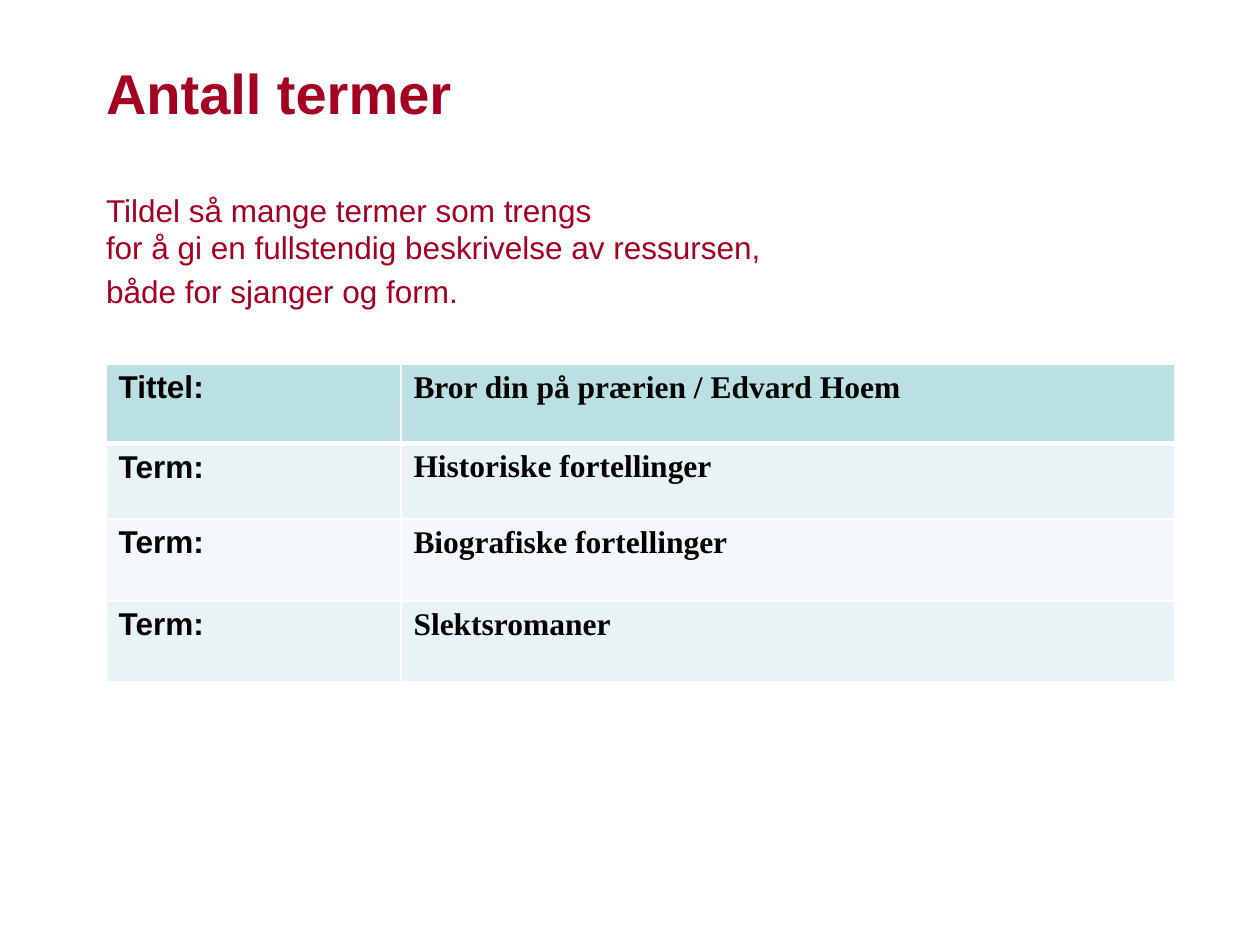
from pptx import Presentation
from pptx.dml.color import RGBColor
from pptx.enum.text import MSO_ANCHOR
from pptx.oxml import parse_xml
from pptx.oxml.ns import nsdecls
from pptx.util import Pt

COLORS = {
    "heading": "A50021",
    "text": "000000",
    "border": "FFFFFF",
    "header": "BBE0E3",
    "odd": "E7F3F4",
    "even": "F3F9FA",
}
HEADING = "Antall termer"
GUIDANCE = [
    ("Tildel så mange termer som trengs\vfor å gi en fullstendig beskrivelse av ressursen,", 37.2),
    ("både for sjanger og form.", 3.6),
]
RECORD = [
    ("Tittel:", "Bror din på prærien / Edvard Hoem"),
    ("Term:", "Historiske fortellinger"),
    ("Term:", "Biografiske fortellinger"),
    ("Term:", "Slektsromaner"),
]
COLUMNS = [(168.5, "Arial"), (442, "Times New Roman")]
ROW_HEIGHTS = [45.4, 43.2, 46.8, 46.4]
LEFT, INTRO_TOP, RECORD_TOP = 60.6, 33.3, 208


def style(paragraph, size, font, color, bold):
    paragraph.font.size = Pt(size)
    paragraph.font.name = font
    paragraph.font.bold = bold
    paragraph.font.color.rgb = RGBColor.from_string(COLORS[color])


def add_borders(cell, bottom_width, top_width):
    properties = cell._tc.get_or_add_tcPr()
    widths = {"lnL": 1, "lnR": 1, "lnT": top_width, "lnB": bottom_width}
    for position, (side, width) in enumerate(widths.items()):
        properties.insert(position, parse_xml(
            f'<a:{side} {nsdecls("a")} w="{Pt(width)}"><a:solidFill>'
            f'<a:srgbClr val="{COLORS["border"]}"/></a:solidFill></a:{side}>'))


def add_intro(slide):
    frame = slide.shapes.add_textbox(Pt(LEFT), Pt(INTRO_TOP), Pt(640), Pt(146)).text_frame
    frame.word_wrap = True
    frame.vertical_anchor = MSO_ANCHOR.TOP
    frame.margin_left = frame.margin_right = frame.margin_top = frame.margin_bottom = 0
    heading = frame.paragraphs[0]
    heading.text = HEADING
    style(heading, 32, "Arial", "heading", True)
    for text, gap in GUIDANCE:
        guidance = frame.add_paragraph()
        guidance.text = text
        guidance.space_before = Pt(gap)
        guidance.line_spacing = Pt(21.6)
        style(guidance, 18, "Arial", "heading", False)


def add_record(slide):
    width = sum(column_width for column_width, _ in COLUMNS)
    table = slide.shapes.add_table(
        len(RECORD), len(COLUMNS), Pt(LEFT), Pt(RECORD_TOP), Pt(width), Pt(sum(ROW_HEIGHTS))).table
    for column, (column_width, _) in zip(table.columns, COLUMNS):
        column.width = Pt(column_width)
    for r, (entry, height) in enumerate(zip(RECORD, ROW_HEIGHTS)):
        table.rows[r].height = Pt(height)
        band = "header" if r == 0 else "odd" if r % 2 else "even"
        for c, (text, (_, font)) in enumerate(zip(entry, COLUMNS)):
            cell = table.cell(r, c)
            cell.text = text
            cell.fill.solid()
            cell.fill.fore_color.rgb = RGBColor.from_string(COLORS[band])
            style(cell.text_frame.paragraphs[0], 18, font, "text", True)
            add_borders(cell, 3 if r == 0 else 1, 3 if r == 1 else 1)


def main():
    deck = Presentation()
    deck.slide_width, deck.slide_height = Pt(720), Pt(540)
    slide = deck.slides.add_slide(deck.slide_layouts[6])
    add_intro(slide)
    add_record(slide)
    deck.save("out.pptx")


if __name__ == "__main__":
    main()
